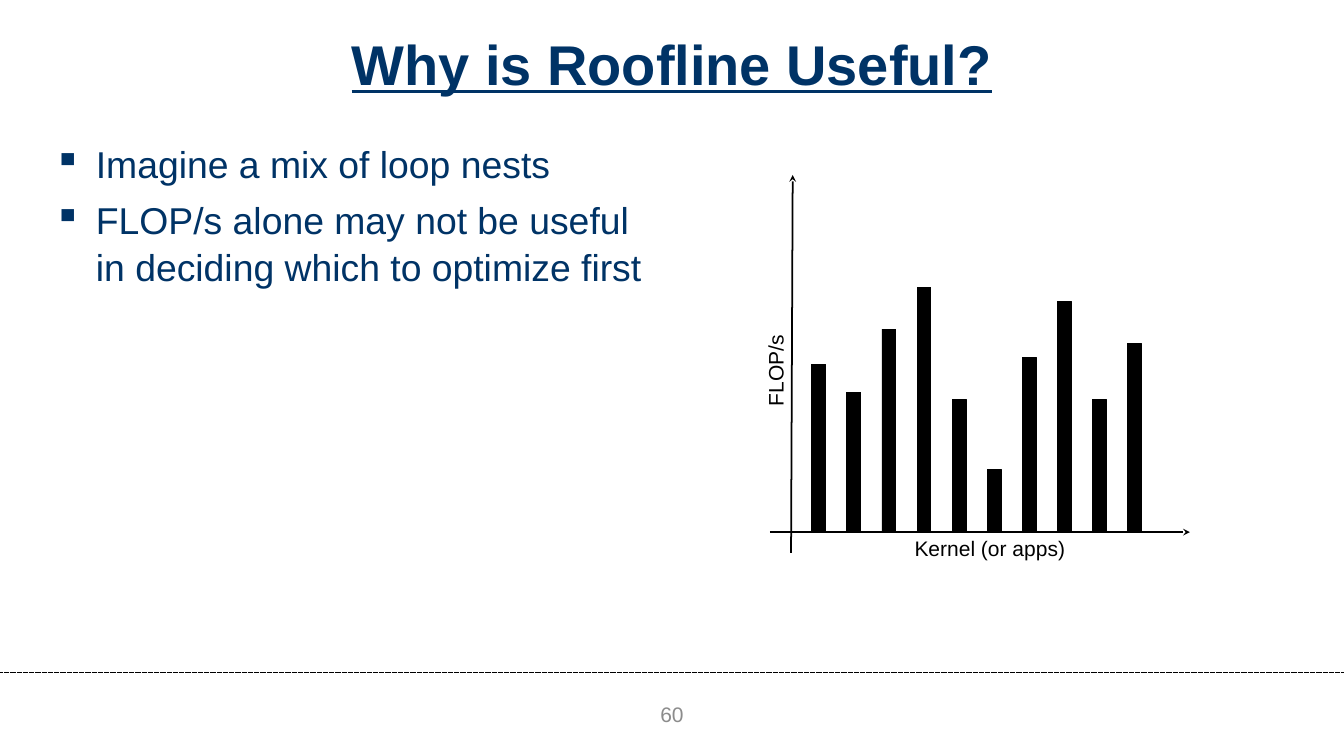
import pptx
import pptx.util
import pptx.dml.color
import pptx.enum.dml
import pptx.enum.shapes
import pptx.enum.text
import pptx.oxml.ns
from lxml import etree
from pptx.util import Cm, Pt

COLOURS = {"navy": "003366", "black": "000000", "grey": "8C8C8C"}
TITLE = {"name": "Arial", "size": Pt(48), "bold": True, "underline": True}
BODY = {"name": "Arial", "size": Pt(32)}
LABEL = {"name": "Arial", "size": Pt(18)}
WIDE_MARGINS = (Cm(0.36), Cm(0.18))
LABEL_MARGINS = (Cm(0.25), Cm(0.13))
CENTER = pptx.enum.text.PP_ALIGN.CENTER
MIDDLE = pptx.enum.text.MSO_ANCHOR.MIDDLE
TOP = pptx.enum.text.MSO_ANCHOR.TOP
POINTS = ["Imagine a mix of loop nests",
          "FLOP/s alone may not be useful in deciding which to optimize first"]
KERNEL_FLOPS = [24, 20, 29, 35, 19, 9, 25, 33, 19, 27]


def colour(name):
    """Return the named colour."""
    return pptx.dml.color.RGBColor.from_string(COLOURS[name])


def style(paragraph, font_format, colour_name):
    """Apply font values and a colour to a paragraph."""
    for key, value in font_format.items():
        setattr(paragraph.font, key, value)
    paragraph.font.color.rgb = colour(colour_name)


def set_frame(frame, margins, anchor):
    """Set wrapping, anchor and margins of a text frame."""
    side, edge = margins
    values = {"word_wrap": True, "vertical_anchor": anchor,
              "margin_left": side, "margin_right": side,
              "margin_top": edge, "margin_bottom": edge}
    for key, value in values.items():
        setattr(frame, key, value)


def add_label(slide, box, text, colour_name, margins=LABEL_MARGINS, anchor=TOP):
    """Add a centred line of label text."""
    label = slide.shapes.add_textbox(*box)
    set_frame(label.text_frame, margins, anchor)
    paragraph = label.text_frame.paragraphs[0]
    paragraph.text = text
    paragraph.alignment = CENTER
    style(paragraph, LABEL, colour_name)
    return label


def add_rule(slide, start, end, width, dash=None, arrow=False):
    """Add a black line, optionally dashed or with an arrowhead."""
    rule = slide.shapes.add_connector(
        pptx.enum.shapes.MSO_CONNECTOR.STRAIGHT, *start, *end)
    rule.line.color.rgb = colour("black")
    rule.line.width = width
    if dash:
        rule.line.dash_style = dash
    properties = rule._element.spPr
    if arrow:
        etree.SubElement(properties.find(pptx.oxml.ns.qn("a:ln")),
                         pptx.oxml.ns.qn("a:tailEnd"), type="stealth")
    etree.SubElement(properties, pptx.oxml.ns.qn("a:effectLst"))


def add_title(slide, box):
    """Place and format the slide title."""
    title = slide.shapes.title
    title.left, title.top, title.width, title.height = box
    set_frame(title.text_frame, WIDE_MARGINS, MIDDLE)
    paragraph = title.text_frame.paragraphs[0]
    paragraph.text = "Why is Roofline Useful?"
    paragraph.alignment = CENTER
    style(paragraph, TITLE, "navy")


def add_points(slide, box):
    """Add the bulleted points."""
    frame = slide.shapes.add_textbox(*box).text_frame
    set_frame(frame, WIDE_MARGINS, TOP)
    for index, point in enumerate(POINTS):
        paragraph = frame.add_paragraph() if index else frame.paragraphs[0]
        paragraph.text = point
        paragraph.line_spacing = 1.05
        paragraph.space_before = Pt(8 if index else 0)
        properties = paragraph._p.get_or_add_pPr()
        properties.set("marL", str(Cm(1.27)))
        properties.set("indent", str(-Cm(1.27)))
        etree.SubElement(properties, pptx.oxml.ns.qn("a:buChar"), char="▪")
        style(paragraph, BODY, "navy")


def add_kernel_plot(slide, box):
    """Draw the FLOP/s bars with their axes and labels."""
    left, top, width, height = box
    baseline = top + Cm(10.8)
    axis_foot = left + Cm(0.64)
    add_rule(slide, (left, baseline), (left + width, baseline), Pt(1.5), arrow=True)
    add_rule(slide, (axis_foot, top + height), (axis_foot + Cm(0.05), top),
             Pt(1.5), arrow=True)
    flops_label = add_label(
        slide, (left - Cm(4.7), top + Cm(5.4), Cm(9.73), Cm(1.02)), "FLOP/s", "black")
    flops_label.rotation = 270
    add_label(slide, (axis_foot, baseline - Cm(0.03), Cm(12.02), Cm(1.02)),
              "Kernel (or apps)", "black")
    for index, flops in enumerate(KERNEL_FLOPS):
        bar_height = Cm(flops * 2.54 / 12)
        bar = slide.shapes.add_shape(
            pptx.enum.shapes.MSO_SHAPE.RECTANGLE,
            left + Cm(1.27) + index * Cm(1.06), baseline - bar_height,
            Cm(0.42), bar_height)
        bar.shadow.inherit = False
        bar.fill.solid()
        bar.fill.fore_color.rgb = bar.line.color.rgb = colour("black")
        bar.line.width = Pt(0.75)


def add_footer(slide, box):
    """Add the dotted rule and the page number."""
    left, top, width, height = box
    add_rule(slide, (left, top), (left + width, top), Pt(0.5),
             dash=pptx.enum.dml.MSO_LINE.ROUND_DOT)
    number_width = Cm(7.62)
    add_label(slide, (left + (width - number_width) // 2, top + Cm(0.64),
                      number_width, Cm(1.27)), "60", "grey", WIDE_MARGINS, MIDDLE)


def main():
    """Build and save the presentation."""
    deck = pptx.Presentation()
    deck.slide_width, deck.slide_height = Cm(40.64), Cm(22.86)
    slide = deck.slides.add_slide(deck.slide_layouts[5])
    add_footer(slide, (0, Cm(20.32), deck.slide_width, Cm(2.54)))
    add_title(slide, (0, 0, deck.slide_width, Cm(3.81)))
    add_points(slide, (Cm(1.27), Cm(4.02), Cm(19.05), Cm(3.18)))
    add_kernel_plot(slide, (Cm(23.28), Cm(5.29), Cm(12.7), Cm(11.43)))
    deck.save("out.pptx")


if __name__ == "__main__":
    main()
